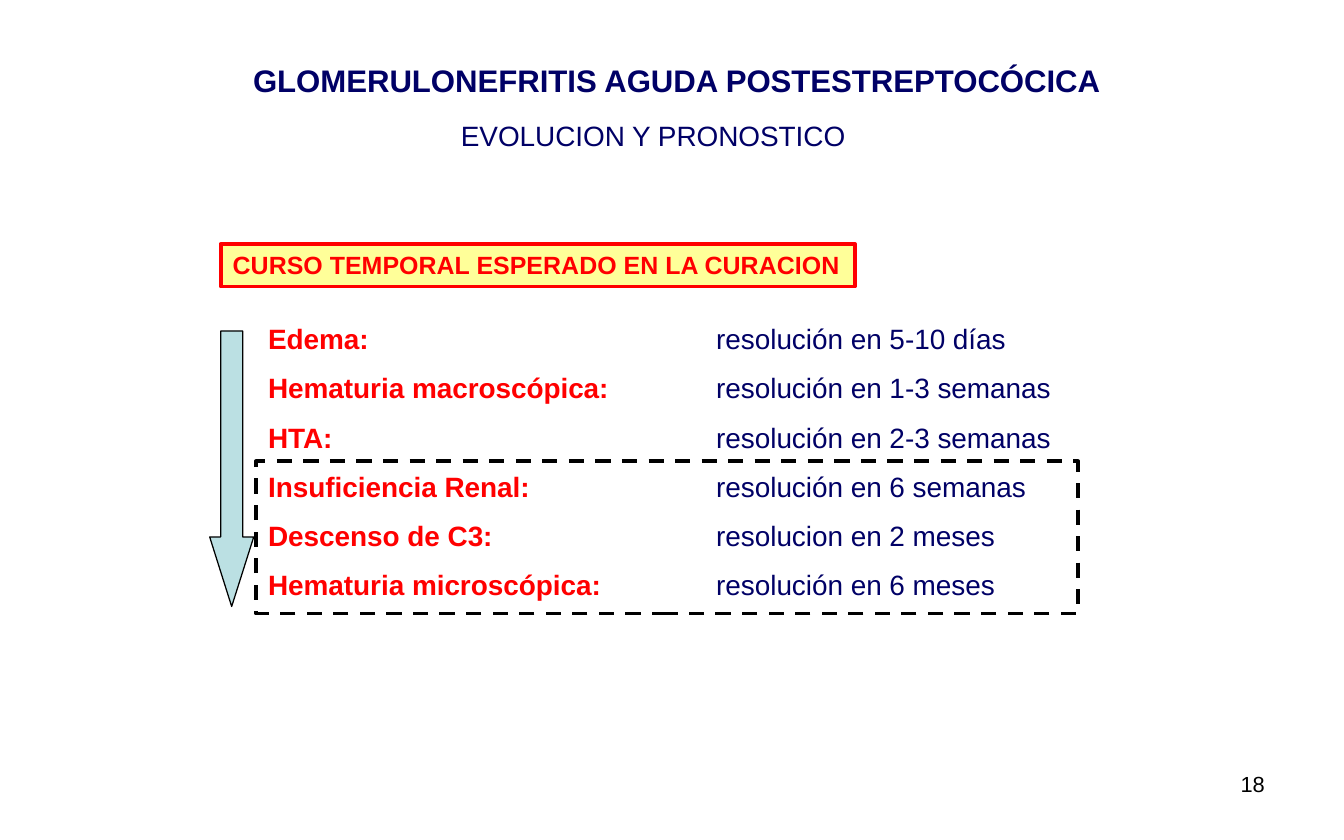
"""Build the slide on the expected course of recovery in glomerulonephritis."""
from lxml import etree
from pptx import Presentation
from pptx import util as u
from pptx.dml.color import RGBColor
from pptx.enum import dml, shapes, text
from pptx.oxml.ns import qn

NAVY = RGBColor(0x00, 0x00, 0x66)
RED = RGBColor(0xFF, 0x00, 0x00)
BLACK = RGBColor(0x00, 0x00, 0x00)
YELLOW = RGBColor(0xFF, 0xFF, 0x99)
PALE_BLUE = RGBColor(0xBB, 0xE0, 0xE3)

COURSE = [
    ("Edema:", "resolución en 5-10 días"),
    ("Hematuria macroscópica:", "resolución en 1-3 semanas"),
    ("HTA:", "resolución en 2-3 semanas"),
    ("Insuficiencia Renal:", "resolución en 6 semanas"),
    ("Descenso de C3:", "resolucion en 2 meses"),
    ("Hematuria microscópica:", "resolución en 6 meses"),
]


def write(para, words, size=16.5, color=NAVY, bold=False, font="Arial"):
    """Add a formatted span to a paragraph."""
    span = para.add_run()
    span.text = words
    span.font.name = font
    span.font.size = u.Pt(size)
    span.font.bold = bold
    span.font.color.rgb = color


class SlideBuilder:
    """Hold the shared style and the current slide."""

    inset_x, inset_y = 7.2, 3.6

    def __init__(self, page):
        """Keep the page to draw on."""
        self.page = page

    def frame(self, box, wrap=True, align=text.PP_ALIGN.LEFT, anchor=text.MSO_ANCHOR.TOP):
        """Set up the text frame of a box and return it."""
        frame = box.text_frame
        frame.auto_size = text.MSO_AUTO_SIZE.NONE
        frame.word_wrap = wrap
        frame.vertical_anchor = anchor
        frame.margin_left = frame.margin_right = u.Pt(self.inset_x)
        frame.margin_top = frame.margin_bottom = u.Pt(self.inset_y)
        frame.paragraphs[0].alignment = align
        return frame

    def title(self, words, left, top, width, height, **style):
        """Place and format the title placeholder."""
        box = self.page.shapes.title
        box.left, box.top, box.width, box.height = map(u.Pt, (left, top, width, height))
        frame = self.frame(box, align=text.PP_ALIGN.CENTER, anchor=text.MSO_ANCHOR.MIDDLE)
        write(frame.paragraphs[0], words, **style)

    def label(self, words, left, top, width, height, align=text.PP_ALIGN.LEFT, **style):
        """Add a one-line text box."""
        box = self.page.shapes.add_textbox(*map(u.Pt, (left, top, width, height)))
        write(self.frame(box, align=align).paragraphs[0], words, **style)

    def course(self, rows, left, top, width, height, tab, gap):
        """Add a list of findings with their times aligned at a tab stop."""
        box = self.page.shapes.add_textbox(*map(u.Pt, (left, top, width, height)))
        frame = self.frame(box)
        for index, (finding, time) in enumerate(rows):
            para = frame.add_paragraph() if index else frame.paragraphs[0]
            para.space_before = u.Pt(gap if index else 0)
            stops = etree.SubElement(para._p.get_or_add_pPr(), qn("a:tabLst"))
            etree.SubElement(stops, qn("a:tab"), pos=str(u.Pt(tab)), algn="l")
            write(para, finding, color=RED, bold=True)
            write(para, "\t" + time)

    def shape(self, kind, left, top, width, height, line, weight, fill=None):
        """Add an outlined preset shape and return it."""
        shape = self.page.shapes.add_shape(kind, *map(u.Pt, (left, top, width, height)))
        shape.shadow.inherit = False
        if fill is None:
            shape.fill.background()
        else:
            shape.fill.solid()
            shape.fill.fore_color.rgb = fill
        shape.line.color.rgb = line
        shape.line.width = u.Pt(weight)
        return shape


def main():
    """Build and save the deck."""
    deck = Presentation()
    deck.slide_width, deck.slide_height = u.Pt(793.44), u.Pt(496.08)
    slide = SlideBuilder(deck.slides.add_slide(deck.slide_layouts[5]))
    preset = shapes.MSO_SHAPE

    slide.title("GLOMERULONEFRITIS AGUDA POSTESTREPTOCÓCICA",
                124, 32.4, 551, 29.5, size=18.4, bold=True)
    slide.label("EVOLUCION Y PRONOSTICO", 265, 66.5, 250, 27.4)
    slide.course(COURSE, 151.2, 186.5, 553, 178, tab=264.5, gap=9.25)

    heading = slide.shape(preset.RECTANGLE, 130.3, 144, 374.4, 25.2, RED, 2.25, YELLOW)
    write(slide.frame(heading, wrap=False).paragraphs[0],
          "CURSO TEMPORAL ESPERADO EN LA CURACION", size=14.7, color=RED, bold=True)

    arrow = slide.shape(preset.DOWN_ARROW, 123.8, 195.5, 26, 162.7, BLACK, 0.75, PALE_BLUE)
    arrow.adjustments[0], arrow.adjustments[1] = 0.5, 1.58

    late_findings = slide.shape(preset.RECTANGLE, 151.2, 272.4, 485.3, 90, BLACK, 2.25)
    late_findings.line.dash_style = dml.MSO_LINE.DASH

    slide.label("18", 568.8, 451.4, 185, 34.6, align=text.PP_ALIGN.RIGHT,
                size=12.9, color=BLACK)
    deck.save("out.pptx")


if __name__ == "__main__":
    main()
